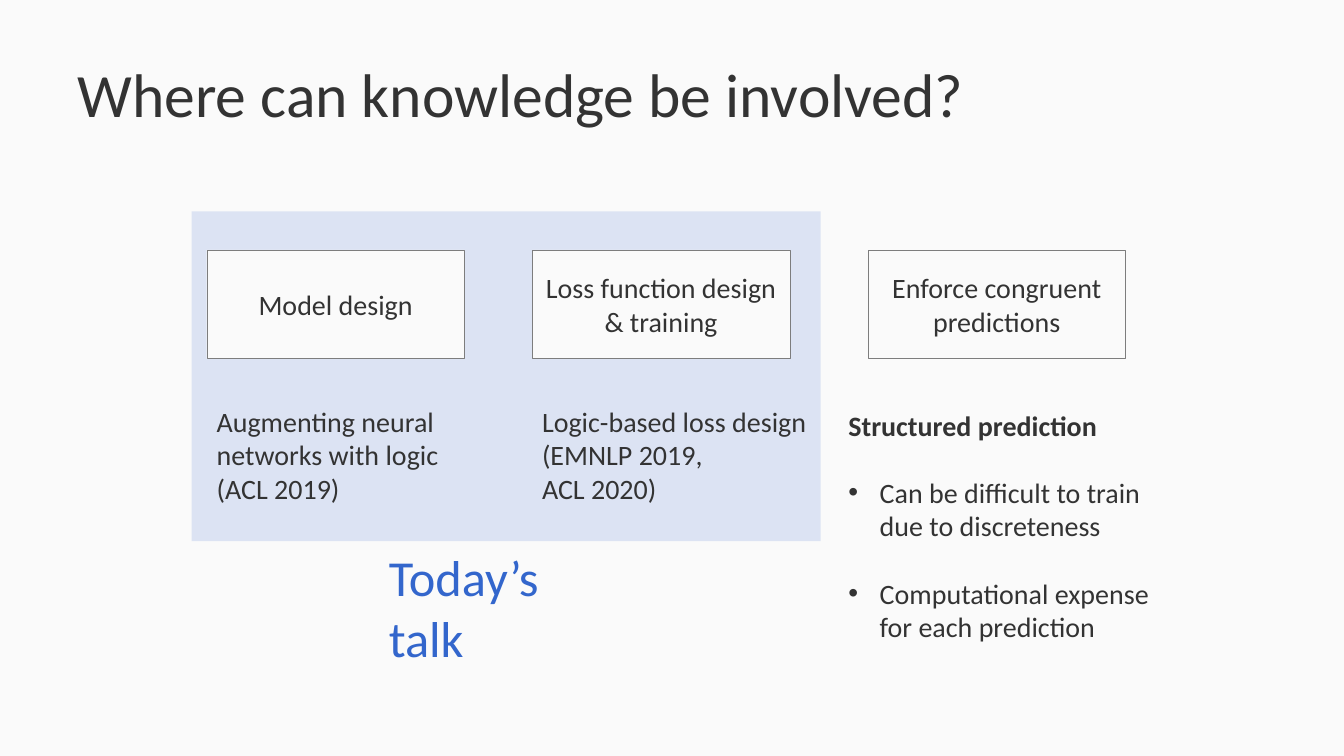
from lxml import etree
from pptx import Presentation
from pptx.dml.color import RGBColor
from pptx.enum.shapes import MSO_SHAPE
from pptx.enum.text import MSO_ANCHOR, PP_ALIGN
from pptx.oxml.ns import qn
from pptx.util import Cm, Pt

RECTANGLE = MSO_SHAPE.RECTANGLE
MIDDLE = MSO_ANCHOR.MIDDLE
LEFT, CENTER = PP_ALIGN.LEFT, PP_ALIGN.CENTER

PAPER = RGBColor(0xFA, 0xFA, 0xFA)
INK = RGBColor(0x33, 0x33, 0x33)
BLUE = RGBColor(0x33, 0x66, 0xCC)
GREY = RGBColor(0x7D, 0x7D, 0x7D)


def set_text(frame, text, size=20, color=INK, align=LEFT):
    frame.word_wrap = True
    frame.text = text
    for paragraph in frame.paragraphs:
        paragraph.alignment = align
        for run in paragraph.runs:
            run.font.name = "Calibri"
            run.font.size = Pt(size)
            run.font.color.rgb = color


prs = Presentation()
prs.slide_width = Cm(33.87)
prs.slide_height = Cm(19.05)
slide = prs.slides.add_slide(prs.slide_layouts[5])
slide.background.fill.solid()
slide.background.fill.fore_color.rgb = PAPER

# Title
title = slide.shapes.title
title.left, title.top, title.width, title.height = Cm(1.7), Cm(0.76), Cm(30.48), Cm(3.18)
set_text(title.text_frame, "Where can knowledge be involved?", size=44)
title.text_frame.vertical_anchor = MIDDLE

# Translucent panel behind the topics of the talk
talk_panel = slide.shapes.add_shape(RECTANGLE, Cm(4.83), Cm(5.33), Cm(15.85), Cm(8.31))
talk_panel.shadow.inherit = False
talk_panel.line.fill.background()
talk_panel.fill.solid()
talk_panel.fill.fore_color.rgb = BLUE
panel_color = talk_panel.fill._xPr.find(qn("a:solidFill"))[0]
etree.SubElement(panel_color, qn("a:alpha")).set("val", "15000")

# Three stages
stages = [
    (5.21, "Model design"),
    (13.41, "Loss function design & training"),
    (21.87, "Enforce congruent predictions"),
]
for left, label in stages:
    stage = slide.shapes.add_shape(RECTANGLE, Cm(left), Cm(6.3), Cm(6.5), Cm(2.74))
    stage.shadow.inherit = False
    stage.fill.solid()
    stage.fill.fore_color.rgb = PAPER
    stage.line.color.rgb = GREY
    stage.line.width = Pt(0.25)
    set_text(stage.text_frame, label, align=CENTER)
    stage.text_frame.vertical_anchor = MIDDLE

# Notes under the stages
notes = [
    (5.21, 10.06, 6.1, 2.82, 20, INK, "Augmenting neural networks with logic (ACL 2019)"),
    (13.41, 10.06, 7.29, 2.82, 20, INK, "Logic-based loss design (EMNLP 2019,\nACL 2020)"),
    (9.55, 13.64, 6.1, 3.3, 36, BLUE, "Today’s talk"),
]
for left, top, width, height, size, color, text in notes:
    note = slide.shapes.add_textbox(Cm(left), Cm(top), Cm(width), Cm(height))
    set_text(note.text_frame, text, size, color)

# Structured prediction and its drawbacks
prediction = slide.shapes.add_textbox(Cm(21.13), Cm(10.16), Cm(8.53), Cm(6.25))
set_text(
    prediction.text_frame,
    "Structured prediction\n"
    "Can be difficult to train due to discreteness\n"
    "Computational expense for each prediction",
)
heading, *drawbacks = prediction.text_frame.paragraphs
heading.runs[0].font.bold = True
for drawback in drawbacks:
    properties = drawback._p.get_or_add_pPr()
    properties.set("marL", str(Cm(0.79)))
    properties.set("indent", str(-Cm(0.79)))
    etree.SubElement(properties, qn("a:buFont")).set("typeface", "Arial")
    etree.SubElement(properties, qn("a:buChar")).set("char", "•")
    drawback.space_before = Pt(24)

prs.save("out.pptx")
